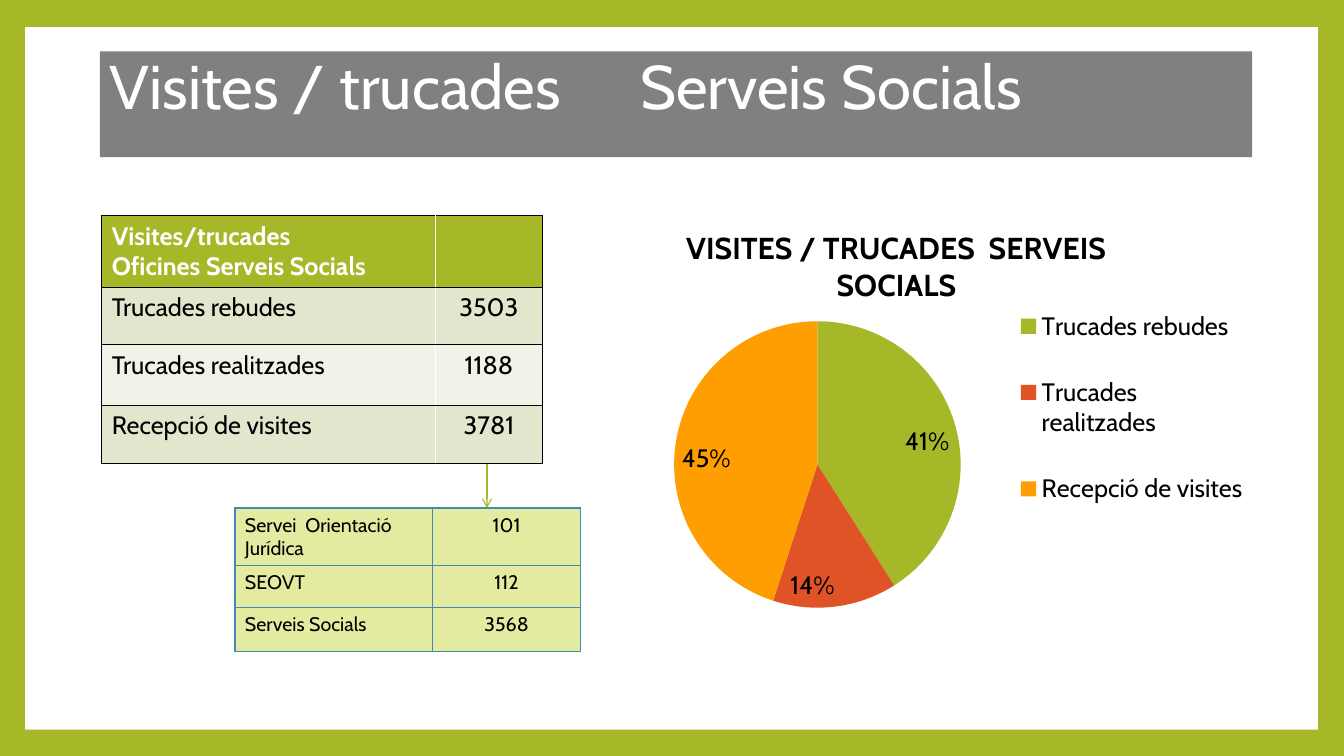
from lxml import etree
from pptx import Presentation
from pptx.chart.data import CategoryChartData
from pptx.dml.color import RGBColor
from pptx.enum.chart import XL_CHART_TYPE, XL_LABEL_POSITION, XL_LEGEND_POSITION
from pptx.enum.shapes import MSO_CONNECTOR, MSO_SHAPE
from pptx.enum.text import MSO_ANCHOR, MSO_AUTO_SIZE, PP_ALIGN
from pptx.oxml import parse_xml
from pptx.oxml.ns import nsdecls, qn
from pptx.util import Inches, Pt

PIE = XL_CHART_TYPE.PIE
INSIDE_END = XL_LABEL_POSITION.INSIDE_END
LEGEND_RIGHT = XL_LEGEND_POSITION.RIGHT
RECTANGLE = MSO_SHAPE.RECTANGLE
STRAIGHT = MSO_CONNECTOR.STRAIGHT
TOP = MSO_ANCHOR.TOP
NO_AUTOFIT = MSO_AUTO_SIZE.NONE
LEFT, CENTER = PP_ALIGN.LEFT, PP_ALIGN.CENTER

# Content
FONT = "Cabin"
COLORS = {
    "green": "A6B727", "red": "DF5327", "orange": "FE9E00", "blue": "418AB3",
    "gray": "808080", "white": "FFFFFF", "black": "000000",
    "band_dark": "E1E6CD", "band_light": "F1F3E8", "lime": "E2EBA0",
}
TITLE = "Visites / trucades\tServeis Socials"
CHART_TITLE = "VISITES / TRUCADES  SERVEIS SOCIALS"
SHARES = [("Trucades rebudes", 41, "green"),
          ("Trucades realitzades", 14, "red"),
          ("Recepció de visites", 45, "orange")]
OFFICES = {
    "position": (1.01, 2.14), "columns": (3.31, 1.06), "heights": (0.71, 0.57, 0.6, 0.58),
    "rows": [("Visites/trucades\nOficines Serveis Socials", ""),
             ("Trucades rebudes", "3503"),
             ("Trucades realitzades", "1188"),
             ("Recepció de visites", "3781")],
    "fills": ("green", "band_dark", "band_light", "band_dark"),
    "size": 18, "header": True, "outer": "black", "inner": "white",
}
BREAKDOWN = {
    "position": (2.33, 5.04), "columns": (1.96, 1.47), "heights": (0.57, 0.41, 0.44),
    "rows": [("Servei  Orientació Jurídica", "101"),
             ("SEOVT", "112"),
             ("Serveis Socials", "3568")],
    "fills": ("lime",) * 3,
    "size": 14, "header": False, "outer": "blue", "inner": "blue",
}


def color(name):
    return RGBColor.from_string(COLORS[name])


def set_fill(target, name):
    target.fill.solid()
    target.fill.fore_color.rgb = color(name)


def set_font(font, size, name, bold=False):
    for key, value in {"name": FONT, "size": Pt(size), "bold": bold}.items():
        setattr(font, key, value)
    font.color.rgb = color(name)


def set_borders(cell, sides):
    properties = cell._tc.get_or_add_tcPr()
    for index, (side, name) in enumerate(sides.items()):
        properties.insert(index, parse_xml(
            f'<a:ln{side} {nsdecls("a")} w="12700"><a:solidFill>'
            f'<a:srgbClr val="{COLORS[name]}"/></a:solidFill></a:ln{side}>'))


def add_table(slide, table_data):
    widths, heights = table_data["columns"], table_data["heights"]
    box = (*table_data["position"], sum(widths), sum(heights))
    table = slide.shapes.add_table(len(heights), len(widths), *map(Inches, box)).table
    table.first_row = table_data["header"]
    table.horz_banding = False
    for column, width in zip(table.columns, widths):
        column.width = Inches(width)
    outer, inner = table_data["outer"], table_data["inner"]
    for row_index, values in enumerate(table_data["rows"]):
        table.rows[row_index].height = Inches(heights[row_index])
        is_header = table_data["header"] and row_index == 0
        for column_index, value in enumerate(values):
            cell = table.cell(row_index, column_index)
            cell.text = value
            set_fill(cell, table_data["fills"][row_index])
            for paragraph in cell.text_frame.paragraphs:
                paragraph.alignment = CENTER if column_index else LEFT
                set_font(paragraph.font, table_data["size"],
                         "white" if is_header else "black", is_header)
            set_borders(cell, {"L": inner if column_index else outer,
                               "R": outer if column_index else inner,
                               "T": outer, "B": outer})


def set_layout(element, **fractions):
    """Place a chart part by fractions of the chart area."""
    for old in element.findall(qn("c:layout")):
        element.remove(old)
    parts = "".join(f'<c:{key}Mode val="edge"/>' for key in "xy")
    parts += "".join(f'<c:{key} val="{value}"/>' for key, value in fractions.items())
    target = '<c:layoutTarget val="inner"/>' if element.tag == qn("c:plotArea") else ""
    layout = parse_xml(f'<c:layout {nsdecls("c")}><c:manualLayout>{target}{parts}'
                       '</c:manualLayout></c:layout>')
    before = [child for child in element if child.tag in (qn("c:tx"), qn("c:legendPos"))]
    element.insert(len(before), layout)


def add_pie(slide):
    data = CategoryChartData()
    data.categories = [name for name, _, _ in SHARES]
    data.add_series("Series 1", [value for _, value, _ in SHARES])
    box = map(Inches, (6.04, 2.01, 6.46, 4.52))
    chart = slide.shapes.add_chart(PIE, *box, data).chart
    set_font(chart.font, 18, "black")

    chart.has_title = True
    chart.chart_title.text_frame.text = CHART_TITLE
    title_run = chart.chart_title.text_frame.paragraphs[0].runs[0]
    set_font(title_run.font, 21.6, "black", True)

    chart.has_legend = True
    chart.legend.position = LEGEND_RIGHT
    chart.legend.include_in_layout = False
    set_font(chart.legend.font, 18, "black")

    plot = chart.plots[0]
    plot.vary_by_categories = True
    for index, (_, _, name) in enumerate(SHARES):
        set_fill(plot.series[0].points[index].format, name)
    plot.has_data_labels = True
    labels = plot.data_labels
    for key, value in {"show_percentage": True, "show_value": False,
                       "number_format": "0%", "number_format_is_linked": False,
                       "position": INSIDE_END}.items():
        setattr(labels, key, value)
    set_font(labels.font, 18, "black")

    set_layout(chart.chart_title._element, x=0.11, y=0.04)
    set_layout(chart.legend._element, x=0.66, y=0.16, w=0.34, h=0.58)
    set_layout(chart._chartSpace.chart.plotArea, x=0.1, y=0.26, w=0.44, h=0.63)


def add_arrow(slide, x, top, bottom):
    arrow = slide.shapes.add_connector(STRAIGHT, *map(Inches, (x, top, x, bottom)))
    arrow.line.color.rgb = color("green")
    arrow.line.width = Pt(0.79)
    etree.SubElement(arrow.line._get_or_add_ln(), qn("a:tailEnd"), type="arrow")
    etree.SubElement(arrow._element.spPr, qn("a:effectLst"))


def add_title(slide):
    title = slide.shapes.title
    title.left, title.top, title.width, title.height = map(Inches, (0.99, 0.51, 11.43, 1.05))
    set_fill(title, "gray")
    frame = title.text_frame
    frame.text = TITLE
    frame.word_wrap = True
    frame.auto_size = NO_AUTOFIT
    frame.vertical_anchor = TOP
    paragraph = frame.paragraphs[0]
    paragraph.alignment = LEFT
    paragraph.line_spacing = 0.9
    set_font(paragraph.runs[0].font, 44, "white")
    # Tab stop for the second half of the title
    tabs = etree.SubElement(paragraph._p.get_or_add_pPr(), qn("a:tabLst"))
    etree.SubElement(tabs, qn("a:tab"), pos=str(Inches(5.26)), algn="l")


def main():
    presentation = Presentation()
    presentation.slide_width, presentation.slide_height = Inches(13.33), Inches(7.5)
    slide = presentation.slides.add_slide(presentation.slide_layouts[5])

    # Green frame around a white page
    set_fill(slide.background, "green")
    page = slide.shapes.add_shape(RECTANGLE, *map(Inches, (0.25, 0.27, 12.82, 6.97)))
    page.shadow.inherit = False
    set_fill(page, "white")
    page.line.fill.background()
    slide.shapes._spTree.insert(2, page._element)

    add_title(slide)
    add_pie(slide)
    add_table(slide, BREAKDOWN)
    add_arrow(slide, 4.83, 4.23, BREAKDOWN["position"][1])
    add_table(slide, OFFICES)
    presentation.save("out.pptx")


if __name__ == "__main__":
    main()
